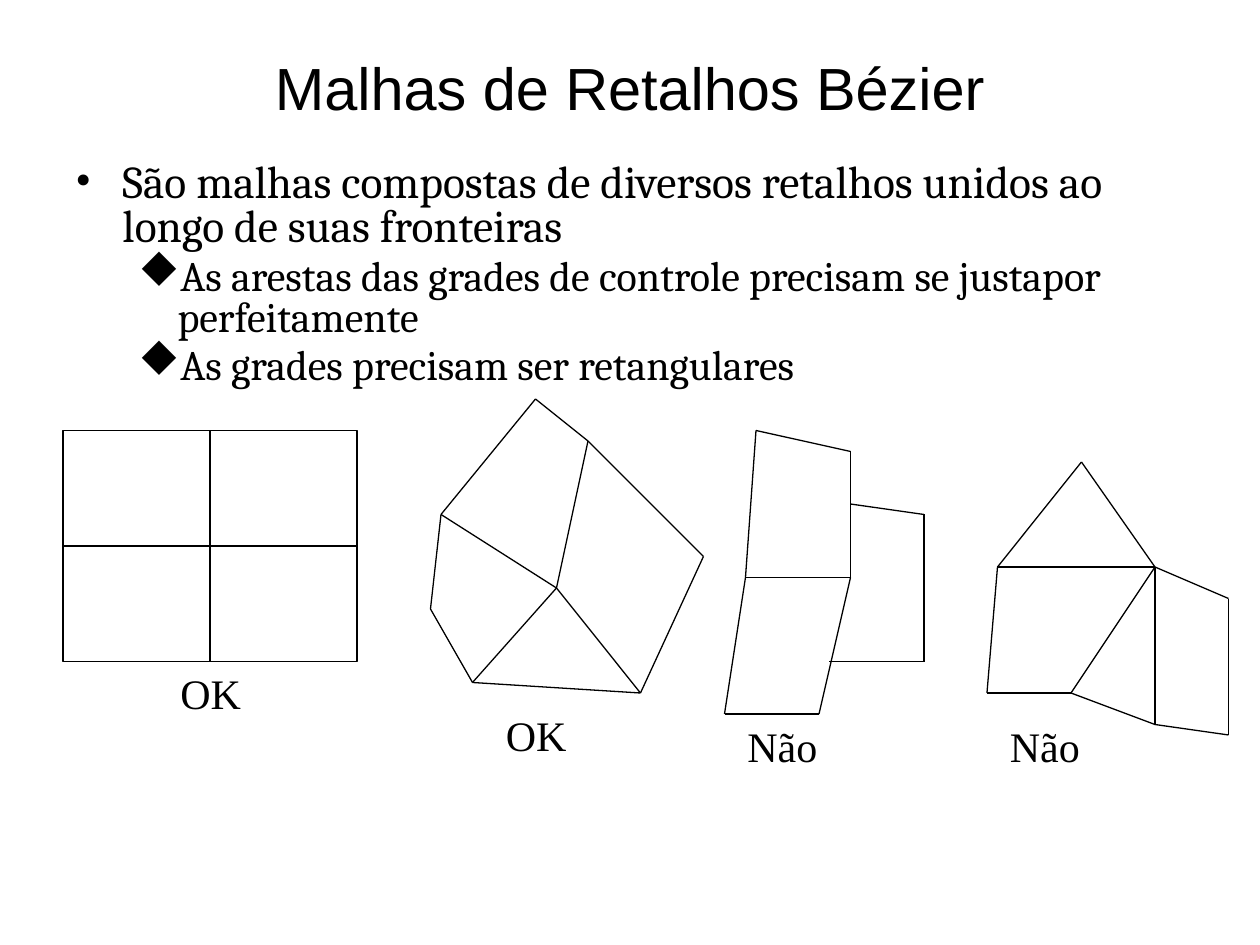
from lxml.etree import SubElement
from pptx import Presentation
from pptx.dml.color import RGBColor
from pptx.enum.shapes import MSO_CONNECTOR as Connector, MSO_SHAPE as Shape
from pptx.enum.text import MSO_ANCHOR as Anchor, PP_ALIGN as Align
from pptx.oxml.ns import qn
from pptx.util import Cm, Pt

BLACK = RGBColor(0, 0, 0)
WHITE = RGBColor(255, 255, 255)
STROKE = Pt(0.75)
GRID = Cm(2.54) / 12  # drawing grid: twelve steps to the inch

# Level: left indent and hanging indent in cm, bullet font and mark, text size
# The letter u is the diamond in Wingdings
LEVELS = [
    (0.95, 0.95, "Times New Roman", "•", 26),
    (2.06, 0.79, "Wingdings", "u", 24),
]

BULLETS = [
    (0, "São malhas compostas de diversos retalhos unidos ao longo de suas fronteiras"),
    (1, "As arestas das grades de controle precisam se justapor perfeitamente"),
    (1, "As grades precisam ser retangulares"),
]

# Each mesh: origin, corners and label place in grid steps, and edges as corner chains
MESHES = [
    dict(origin=(41, 38), verdict="OK", label_at=(6, 29),
         corners=dict(a=(10, 0), b=(15, 4), c=(26, 15), d=(20, 28),
                      e=(4, 27), f=(0, 20), g=(1, 11), m=(12, 18)),
         chains=["abcdefga", "bm", "dm", "em", "gm"]),
    dict(origin=(69, 41), verdict="Não", label_at=(1, 27),
         corners=dict(a=(3, 0), b=(2, 14), c=(12, 2), d=(12, 14), e=(12, 7),
                      f=(19, 8), g=(19, 22), h=(10, 22), i=(9, 27), j=(0, 27)),
         chains=["bacdbjid", "efgh"]),
    dict(origin=(94, 44), verdict="Não", label_at=(1, 24),
         corners=dict(a=(9, 0), b=(1, 10), c=(16, 10), d=(8, 22), e=(23, 13),
                      f=(16, 25), g=(23, 26), h=(0, 22)),
         chains=["cabcdhb", "cegfd", "cf"]),
]


def steps(count):
    return round(count * GRID)


def add_run(paragraph, text, font, size):
    run = paragraph.add_run()
    run.text = text
    run.font.name = font
    run.font.size = Pt(size)
    run.font.color.rgb = BLACK


def add_title(slide, left, top, width, height):
    frame = slide.shapes.add_textbox(left, top, width, height).text_frame
    frame.word_wrap = True
    frame.vertical_anchor = Anchor.MIDDLE
    heading = frame.paragraphs[0]
    heading.alignment = Align.CENTER
    add_run(heading, "Malhas de Retalhos Bézier", "Arial", 34)


def add_bullets(slide, left, top, width, height):
    frame = slide.shapes.add_textbox(left, top, width, height).text_frame
    frame.word_wrap = True
    for index, (level, text) in enumerate(BULLETS):
        item = frame.add_paragraph() if index else frame.paragraphs[0]
        indent, hanging, mark_font, mark, size = LEVELS[level]
        item.level = level
        item.line_spacing = 0.8
        item.space_before = Pt(0.2 * size)
        properties = item._p.get_or_add_pPr()
        properties.set("marL", str(Cm(indent)))
        properties.set("indent", str(-Cm(hanging)))
        bullet_font = SubElement(properties, qn("a:buFont"), typeface=mark_font)
        if mark_font == "Wingdings":
            bullet_font.set("charset", "2")  # symbol character set
        SubElement(properties, qn("a:buChar"), char=mark)
        add_run(item, text, "Cambria", size)


def add_verdict(slide, left, top, text):
    width = Cm(1.73) if text == "OK" else Cm(1.93)
    frame = slide.shapes.add_textbox(left, top, width, Cm(1.27)).text_frame
    frame.word_wrap = False
    add_run(frame.paragraphs[0], text, "Times New Roman", 24)


def add_regular_mesh(slide, left, top, width, height):
    # Two by two patches with matching edges
    for column in range(2):
        for row in range(2):
            patch = slide.shapes.add_shape(
                Shape.RECTANGLE, left + column * width // 2, top + row * height // 2,
                width // 2, height // 2)
            patch.shadow.inherit = False
            patch.fill.solid()
            patch.fill.fore_color.rgb = WHITE
            patch.line.color.rgb = BLACK
            patch.line.width = STROKE
    add_verdict(slide, left + steps(10), top + height, "OK")


def add_irregular_mesh(slide, left, top, corners, chains, verdict, label_at):
    def place(point):
        return left + steps(point[0]), top + steps(point[1])

    for chain in chains:
        for start, end in zip(chain, chain[1:]):
            edge = slide.shapes.add_connector(
                Connector.STRAIGHT, *place(corners[start]), *place(corners[end]))
            edge.line.color.rgb = BLACK
            edge.line.width = STROKE
            SubElement(edge._element.spPr, qn("a:effectLst"))
    add_verdict(slide, *place(label_at), verdict)


def main():
    deck = Presentation()
    deck.slide_width, deck.slide_height = Cm(25.4), Cm(19.05)
    slide = deck.slides.add_slide(deck.slide_layouts[6])

    add_title(slide, Cm(1.27), Cm(0.76), Cm(22.86), Cm(1.98))
    add_bullets(slide, Cm(1.27), Cm(3.18), Cm(22.86), Cm(5.21))

    add_regular_mesh(slide, steps(6), steps(41), steps(28), steps(22))
    for mesh in MESHES:
        column, row = mesh["origin"]
        add_irregular_mesh(slide, steps(column), steps(row), mesh["corners"],
                           mesh["chains"], mesh["verdict"], mesh["label_at"])

    deck.save("out.pptx")


if __name__ == "__main__":
    main()
